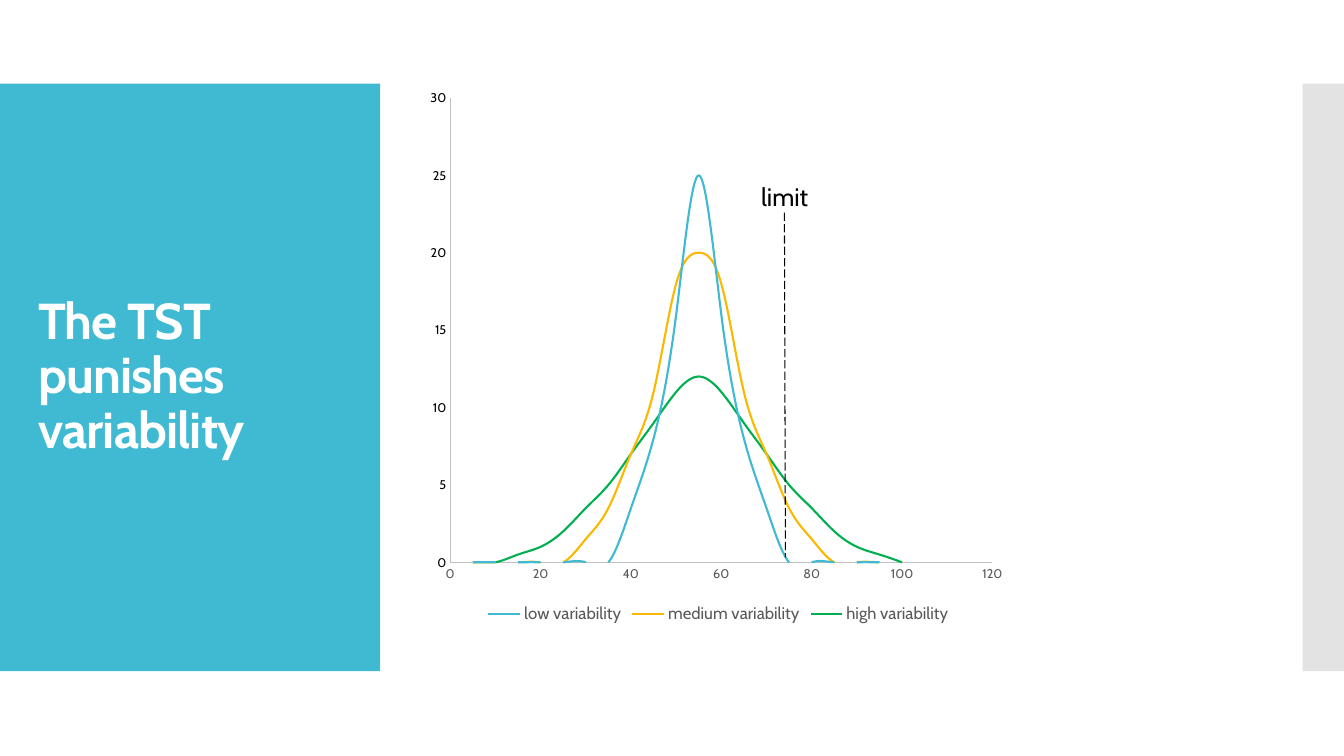
from dataclasses import dataclass

from lxml.etree import SubElement, fromstring
from pptx import Presentation
from pptx.chart.data import XyChartData
from pptx.dml.color import RGBColor
from pptx.enum.chart import XL_CHART_TYPE, XL_LEGEND_POSITION, XL_TICK_MARK
from pptx.enum.dml import MSO_LINE
from pptx.enum.shapes import MSO_CONNECTOR, MSO_SHAPE
from pptx.enum.text import MSO_ANCHOR, MSO_AUTO_SIZE
from pptx.oxml.ns import nsdecls, qn
from pptx.util import Inches, Pt

FONT = "Cabin"
COLORS = {
    "teal": "40BAD2", "amber": "FAB900", "green": "00B050", "gray": "C8C8C8",
    "axis": "BFBFBF", "label": "595959", "black": "000000", "white": "FFFFFF",
}


@dataclass
class Band:
    left: float
    width: float
    color: str
    opacity: int


@dataclass
class Curve:
    name: str
    color: str
    rising: list[float]  # from x = 5 up to the peak at x = 55

    def values(self) -> list[float]:
        """Mirror the rising side around the peak, ending at x = 100."""
        return self.rising + self.rising[-2:0:-1]


@dataclass
class Label:
    text: str
    left: float
    top: float
    width: float
    height: float
    size: int
    color: str


BANDS = [Band(0, 3.77, "teal", 100), Band(12.92, 0.42, "gray", 50)]
CURVES = [
    Curve("low variability", "teal", [0, 0, 0, 0, 0, 0, 0, 3.5, 8, 16, 25]),
    Curve("medium variability", "amber", [0, 0, 0, 0, 0, 1.5, 3.5, 7, 11, 18, 20]),
    Curve("high variability", "green", [0, 0, 0.5, 1, 2, 3.5, 5, 7, 9, 11, 12]),
]
TITLE = Label("The TST punishes variability", 0.28, 1.23, 3.22, 5.03, 36, "white")
LIMIT = Label("limit", 7.45, 1.75, 0.67, 0.4, 18, "black")


def rgb(name: str) -> RGBColor:
    return RGBColor.from_string(COLORS[name])


def style_font(font, size: int, color: str) -> None:
    font.name = FONT
    font.size = Pt(size)
    font.color.rgb = rgb(color)


def add_band(page, band: Band) -> None:
    box = page.shapes.add_shape(MSO_SHAPE.RECTANGLE, Inches(band.left), Inches(0.83),
                                Inches(band.width), Inches(5.83))
    box.shadow.inherit = False
    box.line.fill.background()
    box.fill.solid()
    box.fill.fore_color.rgb = rgb(band.color)
    if band.opacity < 100:
        color = box.fill._xPr.find(qn("a:solidFill"))[0]
        SubElement(color, qn("a:alpha")).set("val", str(band.opacity * 1000))


def add_label(page, label: Label):
    box = page.shapes.add_textbox(Inches(label.left), Inches(label.top),
                                  Inches(label.width), Inches(label.height))
    box.text_frame.text = label.text
    span = box.text_frame.paragraphs[0].runs[0]
    style_font(span.font, label.size, label.color)
    return box


def add_title(page) -> None:
    frame = add_label(page, TITLE).text_frame
    frame.word_wrap = True
    frame.vertical_anchor = MSO_ANCHOR.MIDDLE
    para = frame.paragraphs[0]
    para.line_spacing = 0.9
    span = para.runs[0]
    span.font.bold = True
    span.font._element.set("spc", "-60")


def style_axis(axis, maximum: int, step: int, color: str) -> None:
    axis.has_major_gridlines = False
    axis.minimum_scale = 0
    axis.maximum_scale = maximum
    axis.major_unit = step
    axis.major_tick_mark = XL_TICK_MARK.NONE
    axis.minor_tick_mark = XL_TICK_MARK.NONE
    axis.format.line.color.rgb = rgb("axis")
    axis.format.line.width = Pt(0.75)
    style_font(axis.tick_labels.font, 9, color)


def set_plot_area(chart, x: float, y: float, w: float, h: float) -> None:
    """Fix the inner plot area, in fractions of the chart."""
    parts = "".join(f'<c:{tag} val="{value}"/>'
                    for tag, value in (("x", x), ("y", y), ("w", w), ("h", h)))
    layout = fromstring(
        f'<c:layout {nsdecls("c")}><c:manualLayout><c:layoutTarget val="inner"/>'
        f'<c:xMode val="edge"/><c:yMode val="edge"/>{parts}</c:manualLayout></c:layout>')
    plot_area = chart._chartSpace.chart.plotArea
    for old in plot_area.findall(qn("c:layout")):
        plot_area.remove(old)
    plot_area.insert(0, layout)


def add_curves(page) -> None:
    data = XyChartData()
    for curve in CURVES:
        points = data.add_series(curve.name)
        for index, value in enumerate(curve.values(), start=1):
            points.add_data_point(5 * index, value)
    chart = page.shapes.add_chart(
        XL_CHART_TYPE.XY_SCATTER_SMOOTH_NO_MARKERS, Inches(4.17), Inches(0.81),
        Inches(5.91), Inches(5.42), data).chart
    style_font(chart.font, 10, "black")
    chart.has_title = False
    chart.plots[0].vary_by_categories = False
    set_plot_area(chart, 0.05, 0.03, 0.91, 0.85)
    style_axis(chart.category_axis, 120, 20, "label")
    style_axis(chart.value_axis, 30, 5, "black")

    chart.has_legend = True
    chart.legend.position = XL_LEGEND_POSITION.BOTTOM
    chart.legend.include_in_layout = False
    style_font(chart.legend.font, 12, "label")

    for curve, series in zip(CURVES, chart.plots[0].series):
        series.format.line.color.rgb = rgb(curve.color)
        series.format.line.width = Pt(1.5)
        series._element.get_or_add_smooth().val = True


def add_limit(page) -> None:
    line = page.shapes.add_connector(MSO_CONNECTOR.STRAIGHT, Inches(7.78), Inches(2.11),
                                     Inches(7.79), Inches(5.53))
    line.line.color.rgb = rgb("black")
    line.line.width = Pt(0.75)
    line.line.dash_style = MSO_LINE.LONG_DASH
    SubElement(line._element.spPr, qn("a:effectLst"))

    frame = add_label(page, LIMIT).text_frame
    frame.word_wrap = False
    frame.auto_size = MSO_AUTO_SIZE.SHAPE_TO_FIT_TEXT


def main() -> None:
    deck = Presentation()
    deck.slide_width = Inches(13.33)
    deck.slide_height = Inches(7.5)
    page = deck.slides.add_slide(deck.slide_layouts[6])

    # Side bands and title
    for band in BANDS:
        add_band(page, band)
    add_title(page)

    # Distribution curves and the limit marker
    add_curves(page)
    add_limit(page)

    deck.save("out.pptx")


if __name__ == "__main__":
    main()
